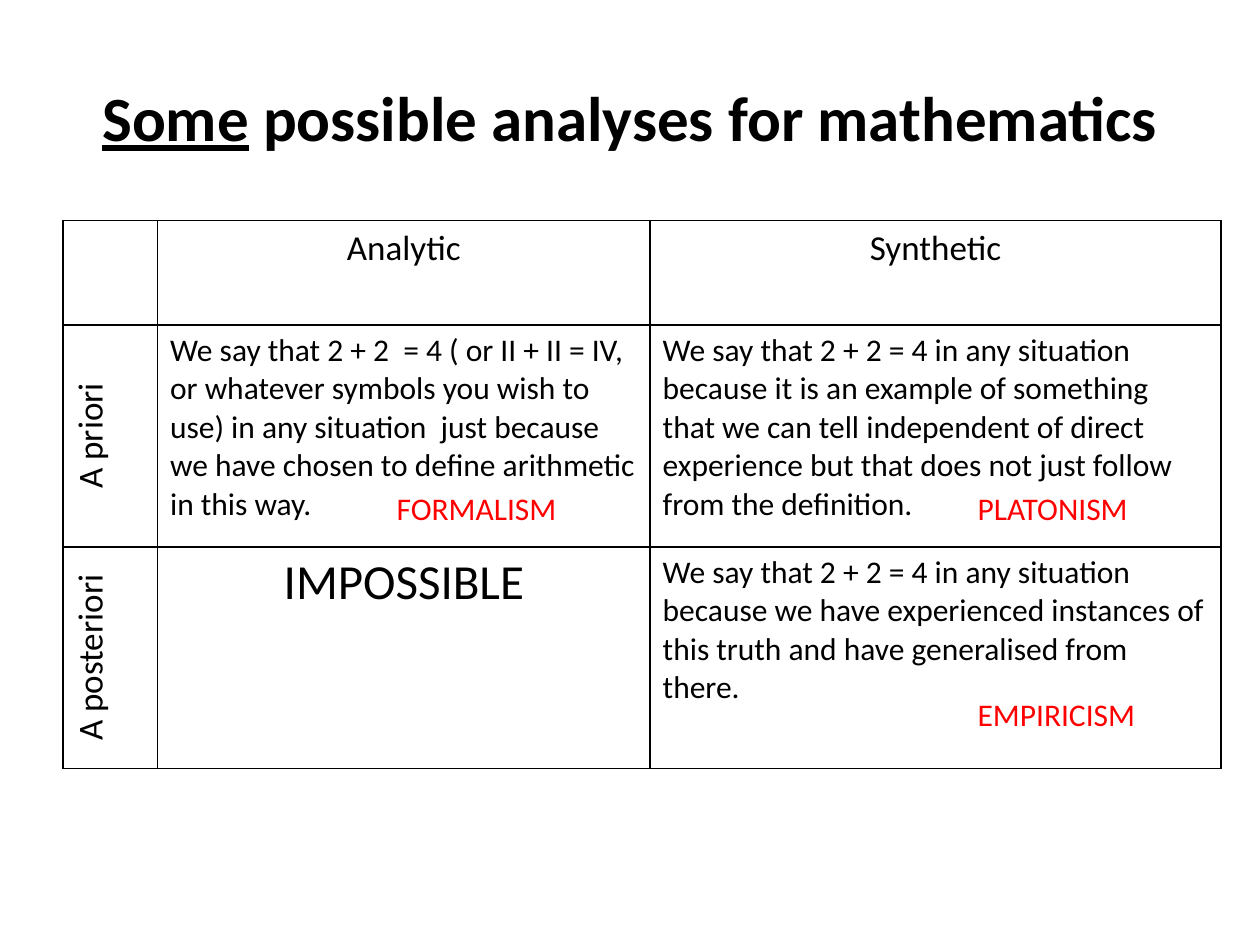
from lxml import etree
from pptx import Presentation
from pptx import util as u
from pptx.dml.color import RGBColor
from pptx.enum import text
from pptx.oxml.ns import qn

HUES = {"ink": "000000", "tag": "FF0000"}
MID = text.PP_ALIGN.CENTER
LEFT = text.PP_ALIGN.LEFT


class Deck:
    font = "Calibri"

    def __init__(self, wide, high):
        self.file = Presentation()
        self.file.slide_width = u.Inches(wide)
        self.file.slide_height = u.Inches(high)
        self.slide = self.file.slides.add_slide(self.file.slide_layouts[6])

    def style(self, run, size, hue="ink", bold=False, line=False):
        font = run.font
        font.name = self.font
        font.size = u.Pt(size)
        font.bold = bold
        font.underline = line
        font.color.rgb = RGBColor.from_string(HUES[hue])

    def label(self, parts, box, size, hue="ink", bold=False, align=LEFT):
        frame = self.slide.shapes.add_textbox(*map(u.Inches, box)).text_frame
        frame.word_wrap = True
        frame.vertical_anchor = text.MSO_ANCHOR.MIDDLE
        para = frame.paragraphs[0]
        para.alignment = align
        for words, line in parts:
            run = para.add_run()
            run.text = words
            self.style(run, size, hue, bold, line)

    def border(self, cell):
        props = cell._tc.get_or_add_tcPr()
        for index, side in enumerate(("lnL", "lnR", "lnT", "lnB")):
            line = etree.Element(qn("a:" + side), w=str(u.Pt(1)))
            fill = etree.SubElement(line, qn("a:solidFill"))
            etree.SubElement(fill, qn("a:srgbClr"), val=HUES["ink"])
            props.insert(index, line)

    def cell(self, cell, words, size, align, turn):
        cell.fill.background()
        self.border(cell)
        if turn:
            cell._tc.get_or_add_tcPr().set("vert", "vert270")
        cell.text_frame.text = words
        para = cell.text_frame.paragraphs[0]
        para.alignment = align
        for run in para.runs:
            self.style(run, size)

    def table(self, rows, left, top, wides, highs):
        box = map(u.Inches, (left, top, sum(wides), sum(highs)))
        grid = self.slide.shapes.add_table(len(highs), len(wides), *box).table
        grid.first_row = grid.horz_banding = False
        for col, wide in zip(grid.columns, wides):
            col.width = u.Inches(wide)
        for y, row in enumerate(rows):
            grid.rows[y].height = u.Inches(highs[y])
            for x, (words, size, align) in enumerate(row):
                turn = x == 0 and y > 0
                self.cell(grid.cell(y, x), words, size, align, turn)


def main():
    deck = Deck(10, 7.5)
    title = [("Some", True), (" possible analyses for mathematics", False)]
    deck.label(title, (0.5, 0.3, 9, 1.25), 36, bold=True, align=MID)

    formal = (
        "We say that 2 + 2  = 4 ( or II + II = IV, or whatever symbols you "
        "wish to use) in any situation  just because we have chosen to define "
        "arithmetic in this way."
    )
    plato = (
        "We say that 2 + 2 = 4 in any situation  because it is an example of "
        "something that we can tell independent of direct experience but that "
        "does not just follow from the definition."
    )
    lived = (
        "We say that 2 + 2 = 4 in any situation because we have experienced "
        "instances of this truth and have generalised from there."
    )
    rows = [
        [("", 20, MID), ("Analytic", 20, MID), ("Synthetic", 20, MID)],
        [("A priori", 20, MID), (formal, 18, LEFT), (plato, 18, LEFT)],
        [("A posteriori", 20, MID), ("IMPOSSIBLE", 28, MID), (lived, 18, LEFT)],
    ]
    deck.table(rows, 0.5, 1.75, (0.75, 3.91, 4.53), (0.83, 1.76, 1.76))

    tags = [
        ("FORMALISM", 3.05, 3.83, 1.56),
        ("EMPIRICISM", 7.66, 5.47, 1.72),
        ("PLATONISM", 7.66, 3.83, 1.72),
    ]
    for words, left, top, wide in tags:
        deck.label([(words, False)], (left, top, wide, 0.4), 18, "tag")
    deck.file.save("out.pptx")


if __name__ == "__main__":
    main()
